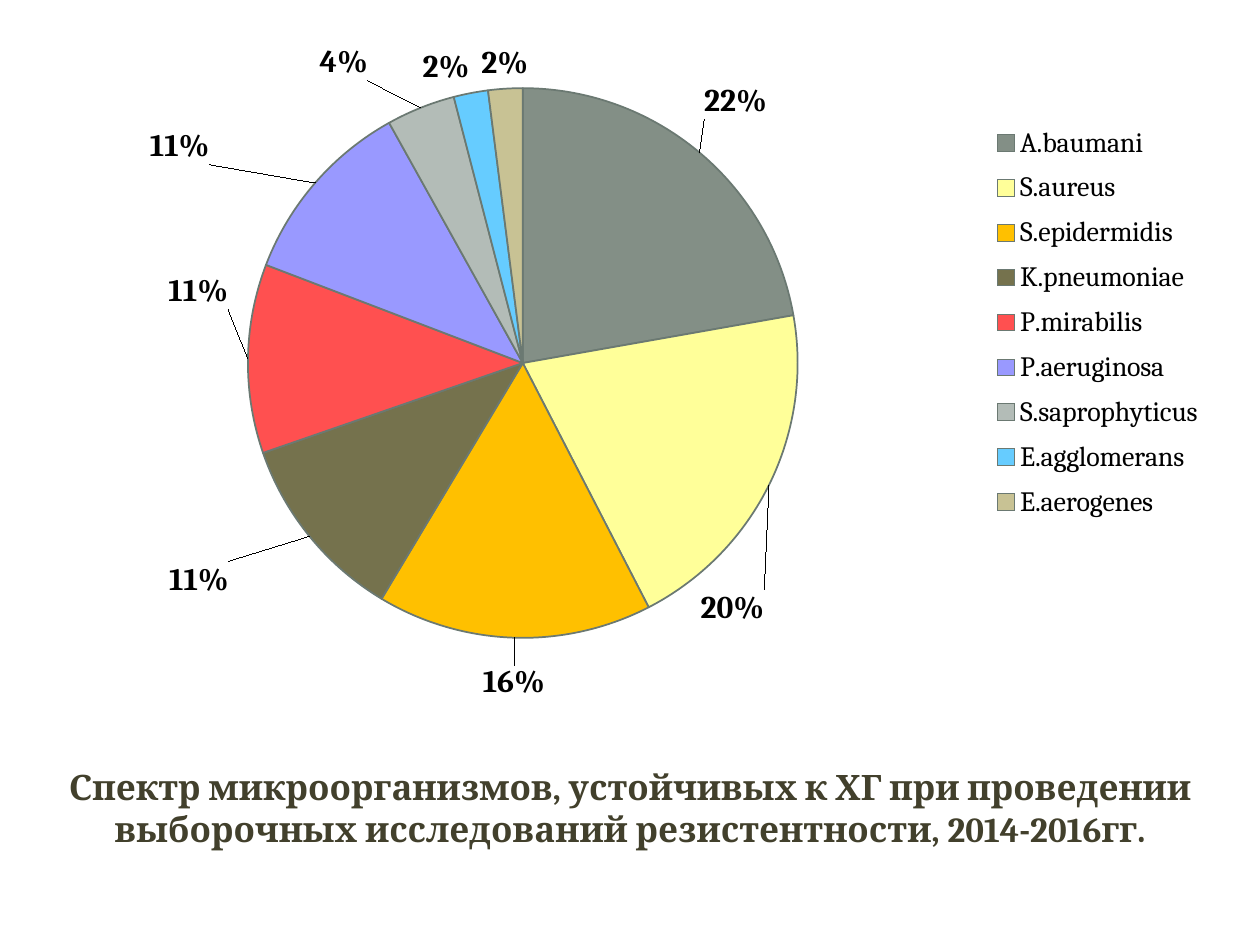
from copy import deepcopy

from lxml import etree
from pptx import Presentation
from pptx.chart.data import CategoryChartData
from pptx.dml.color import RGBColor
from pptx.enum import chart as charts, text
from pptx.oxml import ns
from pptx.util import Pt

COLORS = {"title": "42402C", "label": "000000", "outline": "6B7972"}
FONT = "Cambria"
TITLE = ("Спектр микроорганизмов, устойчивых к ХГ при проведении "
         "выборочных исследований резистентности, 2014-2016гг.")
MICROBES = [  # name, percent, colour, label shift as a share of the chart
    ("A.baumani", 22, "838F86", (0, -0.04)),
    ("S.aureus", 20, "FFFF99", (-0.06, 0.15)),
    ("S.epidermidis", 16, "FFC000", (0, 0.03)),
    ("K.pneumoniae", 11, "75724D", (-0.06, 0.03)),
    ("P.mirabilis", 11, "FF5050", (-0.01, -0.1)),
    ("P.aeruginosa", 11, "9999FF", (-0.08, -0.02)),
    ("S.saprophyticus", 4, "B3BCB7", (-0.04, -0.03)),
    ("E.agglomerans", 2, "66CCFF", None),
    ("E.aerogenes", 2, "C8C294", None),
]


def color(value):
    return RGBColor.from_string(value)


def set_font(font, size, value, bold=False):
    font.name, font.size, font.bold = FONT, Pt(size), bold
    font.color.rgb = color(value)


def make_layout(**settings):
    """Return a manual chart layout with the given settings."""
    layout = etree.Element(ns.qn("c:layout"))
    manual = etree.SubElement(layout, ns.qn("c:manualLayout"))
    for name, value in settings.items():
        etree.SubElement(manual, ns.qn(f"c:{name}")).set("val", str(value))
    return layout


def replace_layout(parent, position, layout):
    for old in parent.findall(ns.qn("c:layout")):
        parent.remove(old)
    parent.insert(position, layout)


def shift_labels(labels):
    """Give moved slices their own label with the shared format."""
    shared = labels._element
    formats = [child for child in shared
               if child.tag != ns.qn("c:showLeaderLines")]
    for index, (_, _, _, shift) in enumerate(MICROBES):
        if shift is None:
            continue
        label = etree.Element(ns.qn("c:dLbl"))
        etree.SubElement(label, ns.qn("c:idx")).set("val", str(index))
        label.append(make_layout(x=shift[0], y=shift[1]))
        label.extend(deepcopy(child) for child in formats)
        shared.insert(index, label)


def add_pie(slide, left, top, width, height):
    data = CategoryChartData()
    data.categories = [name for name, *_ in MICROBES]
    data.add_series("Series 1", [percent for _, percent, *_ in MICROBES])
    chart = slide.shapes.add_chart(charts.XL_CHART_TYPE.PIE, Pt(left), Pt(top),
                                   Pt(width), Pt(height), data).chart
    chart.has_title = False
    set_font(chart.font, 18, COLORS["label"])

    chart.has_legend = True
    legend = chart.legend
    legend.position = charts.XL_LEGEND_POSITION.RIGHT
    legend.include_in_layout = False
    set_font(legend.font, 16, COLORS["label"])
    replace_layout(legend._element, 1, make_layout(
        xMode="edge", yMode="edge", x=0.78, y=0.13, w=0.18, h=0.62))

    plot = chart.plots[0]
    plot.vary_by_categories = True
    replace_layout(plot._element.getparent(), 0, make_layout(
        layoutTarget="inner", xMode="edge", yMode="edge",
        x=0.19, y=0.09, w=0.44, h=0.82))
    series = plot.series[0]
    for index, (_, _, fill, _) in enumerate(MICROBES):
        style = series.points[index].format
        style.fill.solid()
        style.fill.fore_color.rgb = color(fill)
        style.line.color.rgb = color(COLORS["outline"])
        style.line.width = Pt(1)

    labels = series.data_labels
    labels.show_value = False
    labels.show_percentage = True
    labels.number_format = "0%"
    labels.number_format_is_linked = False
    labels.position = charts.XL_LABEL_POSITION.OUTSIDE_END
    set_font(labels.font, 18, COLORS["label"], bold=True)
    shift_labels(labels)


def place_title(slide, left, top, width, height):
    title = slide.shapes.title
    title.left, title.top = Pt(left), Pt(top)
    title.width, title.height = Pt(width), Pt(height)
    frame = title.text_frame
    frame.text = TITLE
    frame.word_wrap = True
    frame.auto_size = text.MSO_AUTO_SIZE.SHAPE_TO_FIT_TEXT
    frame.vertical_anchor = text.MSO_ANCHOR.TOP
    paragraph = frame.paragraphs[0]
    paragraph.alignment = text.PP_ALIGN.CENTER
    set_font(paragraph.runs[0].font, 20, COLORS["title"], bold=True)


def main():
    presentation = Presentation()
    presentation.slide_width, presentation.slide_height = Pt(720), Pt(540)
    slide = presentation.slides.add_slide(presentation.slide_layouts[5])
    add_pie(slide, 6, 15, 714, 385)
    place_title(slide, 0, 434, 720, 55.5)
    presentation.save("out.pptx")


if __name__ == "__main__":
    main()
